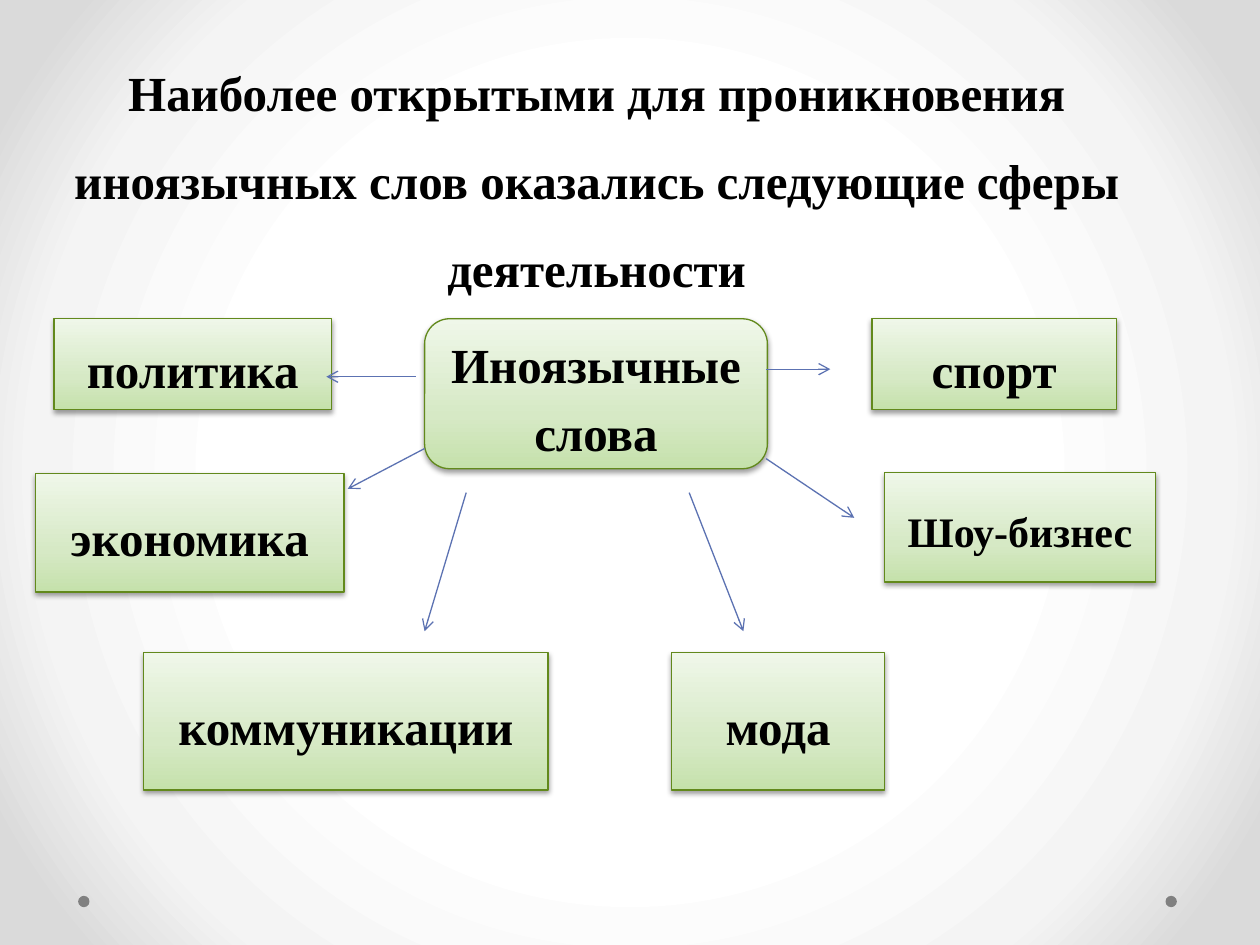
from lxml import etree
from pptx import Presentation
from pptx.dml.color import RGBColor
from pptx.enum import shapes, text
from pptx.oxml import parse_xml
from pptx.oxml.ns import nsdecls, qn
from pptx.util import Inches, Pt


def color(code):
    return RGBColor.from_string(code)


def grad(old, stops, kind):
    marks = "".join(
        f'<a:gs pos="{at * 1000}"><a:srgbClr val="{code}"/></a:gs>' for at, code in stops
    )
    new = parse_xml(f'<a:gradFill {nsdecls("a")}><a:gsLst>{marks}</a:gsLst>{kind}</a:gradFill>')
    old.getparent().replace(old, new)


deck = Presentation()
deck.slide_width, deck.slide_height = Inches(10), Inches(7.5)
slide = deck.slides.add_slide(deck.slide_layouts[6])
slide.background.fill.solid()
grad(
    slide.element.find(".//" + qn("a:solidFill")),
    [(50, "FFFFFF"), (76, "F4F4F4"), (92, "DADADA")],
    '<a:path path="circle"><a:fillToRect l="50000" t="50000" r="50000" b="50000"/></a:path>',
)

for left in (9.25, 0.62):
    dot = slide.shapes.add_shape(
        shapes.MSO_SHAPE.OVAL, Inches(left), Inches(7.11), Inches(0.09), Inches(0.09)
    )
    dot.shadow.inherit = False
    dot.fill.solid()
    dot.fill.fore_color.rgb = color("808080")
    dot.line.fill.background()

title = slide.shapes.add_textbox(Inches(0.35), Inches(0.4), Inches(8.77), Inches(2.01))
title.text_frame.text = (
    "Наиболее открытыми для проникновения иноязычных слов оказались следующие сферы деятельности"
)
title.text_frame.vertical_anchor = text.MSO_ANCHOR.BOTTOM
title.text_frame.paragraphs[0].line_spacing = 1.5
texts = [(title, 28)]

rect, rounded = shapes.MSO_SHAPE.RECTANGLE, shapes.MSO_SHAPE.ROUNDED_RECTANGLE
boxes = [
    ("Иноязычные слова", rounded, 3.37, 2.53, 2.72, 1.19, 28),
    ("политика", rect, 0.43, 2.53, 2.2, 0.72, 28),
    ("экономика", rect, 0.28, 3.76, 2.45, 0.94, 28),
    ("коммуникации", rect, 1.14, 5.18, 3.21, 1.09, 28),
    ("мода", rect, 5.33, 5.18, 1.69, 1.09, 28),
    ("Шоу-бизнес", rect, 7.02, 3.75, 2.15, 0.87, 24),
    ("спорт", rect, 6.92, 2.53, 1.94, 0.72, 28),
]
for label, form, left, top, width, height, size in boxes:
    box = slide.shapes.add_shape(form, Inches(left), Inches(top), Inches(width), Inches(height))
    box.fill.solid()
    props = box.element.spPr
    grad(
        props.find(qn("a:solidFill")),
        [(0, "C5E1AB"), (35, "D6E9C5"), (100, "EFF7E9")],
        '<a:lin ang="16200000" scaled="0"/>',
    )
    box.line.color.rgb = color("62891C")
    box.line.width = Pt(0.75)
    box.shadow.inherit = False
    props.find(qn("a:effectLst")).append(parse_xml(
        f'<a:outerShdw {nsdecls("a")} blurRad="{Pt(3.1)}" dist="{Pt(1.6)}" dir="5400000" '
        'rotWithShape="0"><a:srgbClr val="000000"><a:alpha val="38000"/></a:srgbClr></a:outerShdw>'
    ))
    box.text_frame.text = label
    box.text_frame.vertical_anchor = text.MSO_ANCHOR.MIDDLE
    para = box.text_frame.paragraphs[0]
    para.line_spacing = 1.15
    para.space_after = Pt(10)
    texts.append((box, size))

for item, size in texts:
    item.text_frame.word_wrap = True
    para = item.text_frame.paragraphs[0]
    para.alignment = text.PP_ALIGN.CENTER
    para.font.name = "Times New Roman"
    para.font.size = Pt(size)
    para.font.bold = True
    para.font.color.rgb = color("000000")

arrows = [
    (3.3, 2.99, 2.59, 2.99),
    (3.37, 3.56, 2.76, 3.88),
    (3.7, 3.91, 3.37, 5.01),
    (5.47, 3.91, 5.9, 5.01),
    (6.08, 3.64, 6.78, 4.11),
    (6.08, 2.93, 6.59, 2.93),
]
for ends in arrows:
    arrow = slide.shapes.add_connector(
        shapes.MSO_CONNECTOR.STRAIGHT, *(Inches(end) for end in ends)
    )
    arrow.line.color.rgb = color("5C72B2")
    arrow.line.width = Pt(0.75)
    etree.SubElement(arrow.line._get_or_add_ln(), qn("a:tailEnd"), type="arrow")
    etree.SubElement(arrow.element.spPr, qn("a:effectLst"))

deck.save("out.pptx")
